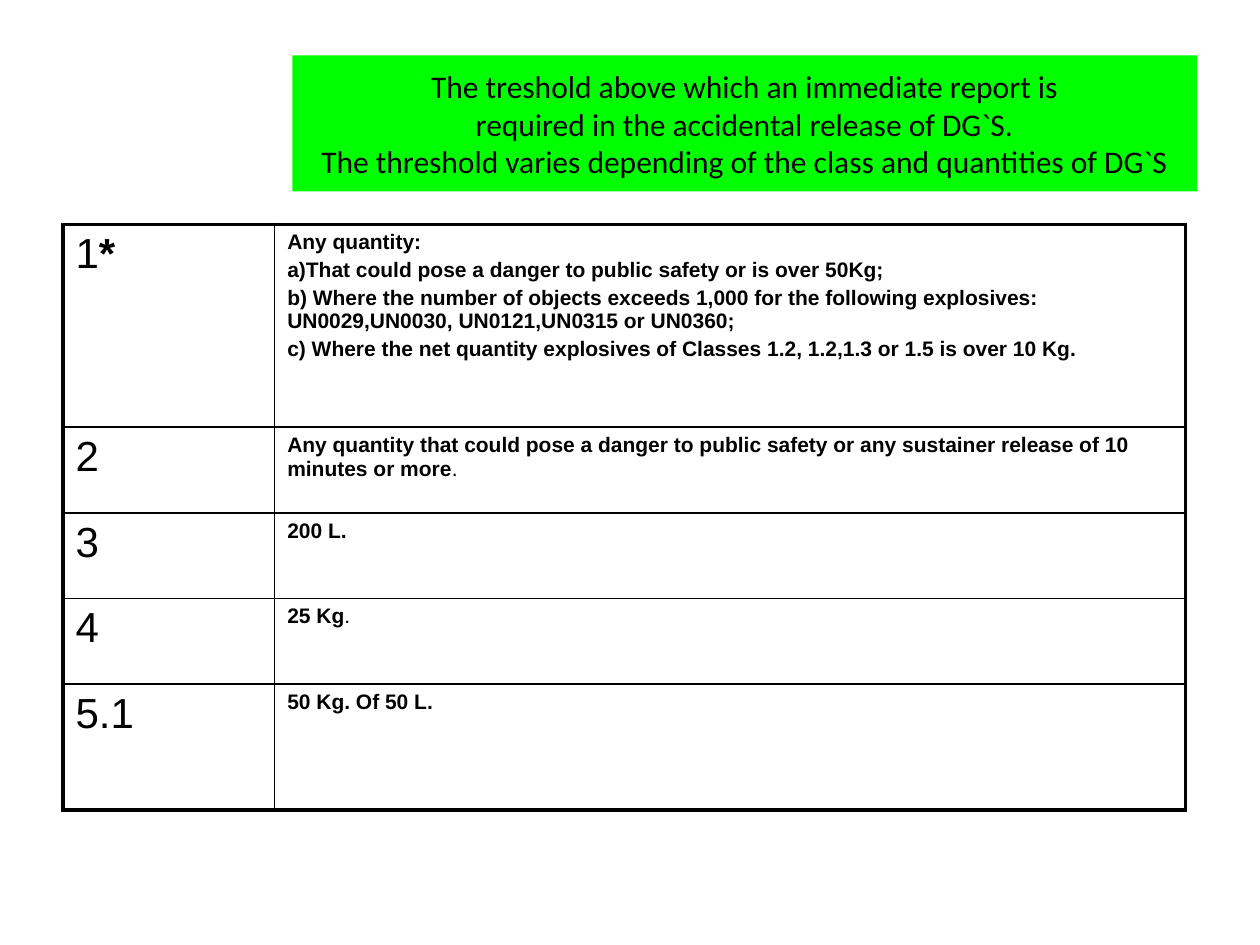
import pptx
import pptx.util
import pptx.dml.color
import pptx.enum.text
import lxml.etree

Inches = pptx.util.Inches
Pt = pptx.util.Pt
COLORS = {"ink": "000000", "banner": "00FF00"}
NS = "http://schemas.openxmlformats.org/drawingml/2006/main"
OUTER, INNER = 2.25, 1


def add_border(cell, side, width):
    line = lxml.etree.SubElement(
        cell._tc.get_or_add_tcPr(), f"{{{NS}}}ln{side}", w=str(Pt(width))
    )
    fill = lxml.etree.SubElement(line, f"{{{NS}}}solidFill")
    lxml.etree.SubElement(fill, f"{{{NS}}}srgbClr", val=COLORS["ink"])


def style(font, name, size, bold):
    font.name = name
    font.size = Pt(size)
    font.bold = bold
    font.color.rgb = pptx.dml.color.RGBColor.from_string(COLORS["ink"])


deck = pptx.Presentation()
deck.slide_width = Inches(10)
deck.slide_height = Inches(7.5)
page = deck.slides.add_slide(deck.slide_layouts[5])

title = page.shapes.title
title.left, title.top = Inches(2.32), Inches(0.44)
title.width, title.height = Inches(7.18), Inches(1.08)
title.fill.solid()
title.fill.fore_color.rgb = pptx.dml.color.RGBColor.from_string(COLORS["banner"])
frame = title.text_frame
frame.text = (
    "The treshold above which an immediate report is\v"
    "required in the accidental release of DG`S.\v"
    "The threshold varies depending of the class and quantities of DG`S"
)
frame.word_wrap = True
frame.auto_size = pptx.enum.text.MSO_AUTO_SIZE.NONE
frame.vertical_anchor = pptx.enum.text.MSO_ANCHOR.MIDDLE
frame.paragraphs[0].alignment = pptx.enum.text.PP_ALIGN.CENTER
for span in frame.paragraphs[0].runs:
    style(span.font, "Calibri", 18, False)

thresholds = [
    (
        [("1", False), ("*", True)],
        [
            [("Any quantity:", True)],
            [("a)That could pose a danger to public safety or is over 50Kg;", True)],
            [("b) Where the number of objects exceeds 1,000 for the following explosives: "
              "UN0029,UN0030, UN0121,UN0315 or UN0360;", True)],
            [("c) Where the net quantity explosives of Classes 1.2, 1.2,1.3 or 1.5 "
              "is over 10 Kg.", True)],
        ],
    ),
    (
        [("2", False)],
        [[("Any quantity that could pose a danger to public safety or any sustainer "
           "release of 10 minutes or more", True), (".", False)]],
    ),
    ([("3", False)], [[("200 L.", True)]]),
    ([("4", False)], [[("25 Kg", True), (".", False)]]),
    ([("5.1", False)], [[("50 Kg. Of 50 L.", True)]]),
]
widths = [1.68, 7.23]
heights = [1.61, 0.68, 0.68, 0.68, 1]
last_row, last_column = len(heights) - 1, len(widths) - 1

table = page.shapes.add_table(
    len(heights), len(widths), Inches(0.5), Inches(1.78),
    Inches(sum(widths)), Inches(sum(heights)),
).table
table.first_row = False
table.horz_banding = False
for column, width in zip(table.columns, widths):
    column.width = Inches(width)
for row, height in zip(table.rows, heights):
    row.height = Inches(height)

for r, (label, limits) in enumerate(thresholds):
    for c, (paragraphs, size) in enumerate([([label], 24), (limits, 12)]):
        cell = table.cell(r, c)
        edges = {"L": c == 0, "R": c == last_column, "T": r == 0, "B": r == last_row}
        for side, is_outer in edges.items():
            add_border(cell, side, OUTER if is_outer else INNER)
        cell.fill.background()
        for i, pieces in enumerate(paragraphs):
            if i == 0:
                para = cell.text_frame.paragraphs[0]
            else:
                para = cell.text_frame.add_paragraph()
                para.space_before = Pt(2.4)
            for text, bold in pieces:
                span = para.add_run()
                span.text = text
                style(span.font, "Arial", size, bold)

deck.save("out.pptx")
